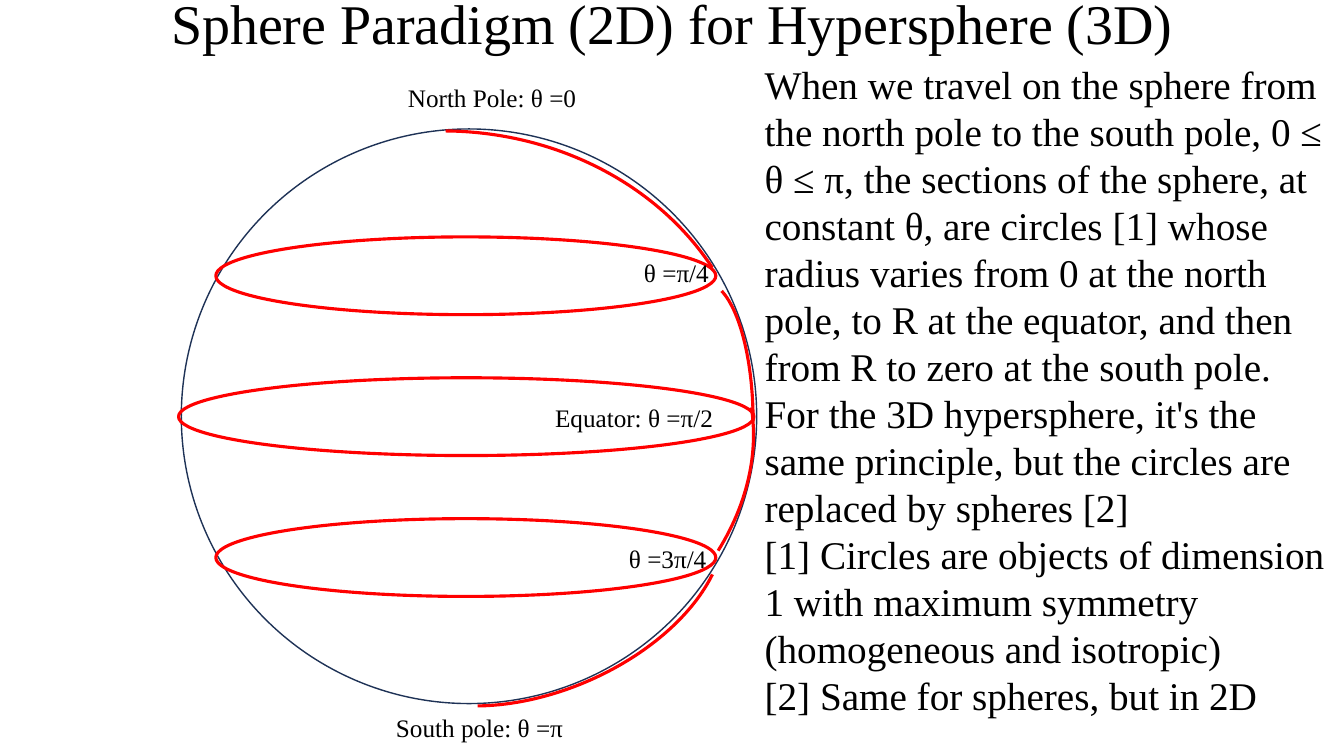
from pptx import Presentation
from pptx import util as u
from pptx.dml.color import RGBColor
from pptx.enum import shapes, text

COLORS = {"ink": "000000", "navy": "1E3256", "red": "FF0000"}
FONT = "Times New Roman"
TITLE = "Sphere Paradigm (2D) for Hypersphere (3D)"
BODY = "\n".join([
    "When we travel on the sphere from the north pole to the south pole, "
    "0 ≤ θ ≤ π, the sections of the sphere, at constant θ, are circles [1] "
    "whose radius varies from 0 at the north pole, to R at the equator, "
    "and then from R to zero at the south pole.",
    "For the 3D hypersphere, it's the same principle, "
    "but the circles are replaced by spheres [2]",
    "[1] Circles are objects of dimension 1 with maximum symmetry "
    "(homogeneous and isotropic)",
    "[2] Same for spheres, but in 2D",
])
LABELS = [
    ("North Pole: θ =0", 10.03, 1.96, 4.8),
    ("Equator: θ =π/2", 13.74, 10.01, 4.52),
    ("θ =π/4", 15.98, 6.35, 2.16),
    ("θ =3π/4", 15.6, 13.56, 2.49),
    ("South pole: θ =π", 9.73, 17.83, 4.78),
]
CIRCLES = [(4.5, 14.5, 1), (5.44, 12.6, 0), (5.44, 12.6, 2)]
TOP_CIRCLE, CIRCLE_STEP, CIRCLE_HEIGHT = 5.97, 3.55, 1.96
MERIDIAN_ARCS = [
    ((3.3, 3.3, 15.7, 13.77), 0, (162.41, 199.91)),
    ((16.54, 7.11, 2.44, 7.01), 0, (166.45, 0)),
    ((7.29, 5.33, 10.49, 13.44), 63.5, (168.56, 188.81)),
    ((8.86, 11.71, 9.63, 5.69), 156.7, (121.33, 192.13)),
]


def set_format(target, **values):
    for name, value in values.items():
        setattr(target, name, value)


def add_text(s, content, box, size, wrap=True, align=text.PP_ALIGN.LEFT):
    tf = s.shapes.add_textbox(*map(u.Cm, box)).text_frame
    set_format(tf, word_wrap=wrap, auto_size=text.MSO_AUTO_SIZE.SHAPE_TO_FIT_TEXT)
    p = tf.paragraphs[0]
    set_format(p, text=content, alignment=align, line_spacing=u.Pt(size * 1.2))
    for r in p.runs:
        set_format(r.font, name=FONT, size=u.Pt(size))
        r.font.color.rgb = RGBColor.from_string(COLORS["ink"])


def add_outline(s, kind, box, color="red", width=2.25, rotation=0, angles=()):
    sp = s.shapes.add_shape(kind, *map(u.Cm, box))
    sp.shadow.inherit = False
    sp.fill.background()
    sp.line.color.rgb = RGBColor.from_string(COLORS[color])
    set_format(sp, rotation=rotation)
    set_format(sp.line, width=u.Pt(width))
    for i, angle in enumerate(angles):
        sp.adjustments[i] = angle


def main():
    prs = Presentation()
    set_format(prs, slide_width=u.Cm(33.87), slide_height=u.Cm(19.05))
    s = prs.slides.add_slide(prs.slide_layouts[6])
    oval, arc = shapes.MSO_SHAPE.OVAL, shapes.MSO_SHAPE.ARC

    add_text(s, TITLE, (0, -0.41, 33.87, 1.96), 40, align=text.PP_ALIGN.CENTER)
    add_outline(s, oval, (4.57, 3.25, 14.5, 14.48), "navy", 1)
    for left, width, row in CIRCLES:
        top = TOP_CIRCLE + row * CIRCLE_STEP
        add_outline(s, oval, (left, top, width, CIRCLE_HEIGHT))
    for label, left, top, width in LABELS:
        add_text(s, label, (left, top, width, 1.02), 18, wrap=False)
    for box, rotation, angles in MERIDIAN_ARCS:
        add_outline(s, arc, box, rotation=rotation, angles=angles)
    add_text(s, BODY, (19.02, 1.4, 14.83, 17.02), 28)

    prs.save("out.pptx")


if __name__ == "__main__":
    main()
